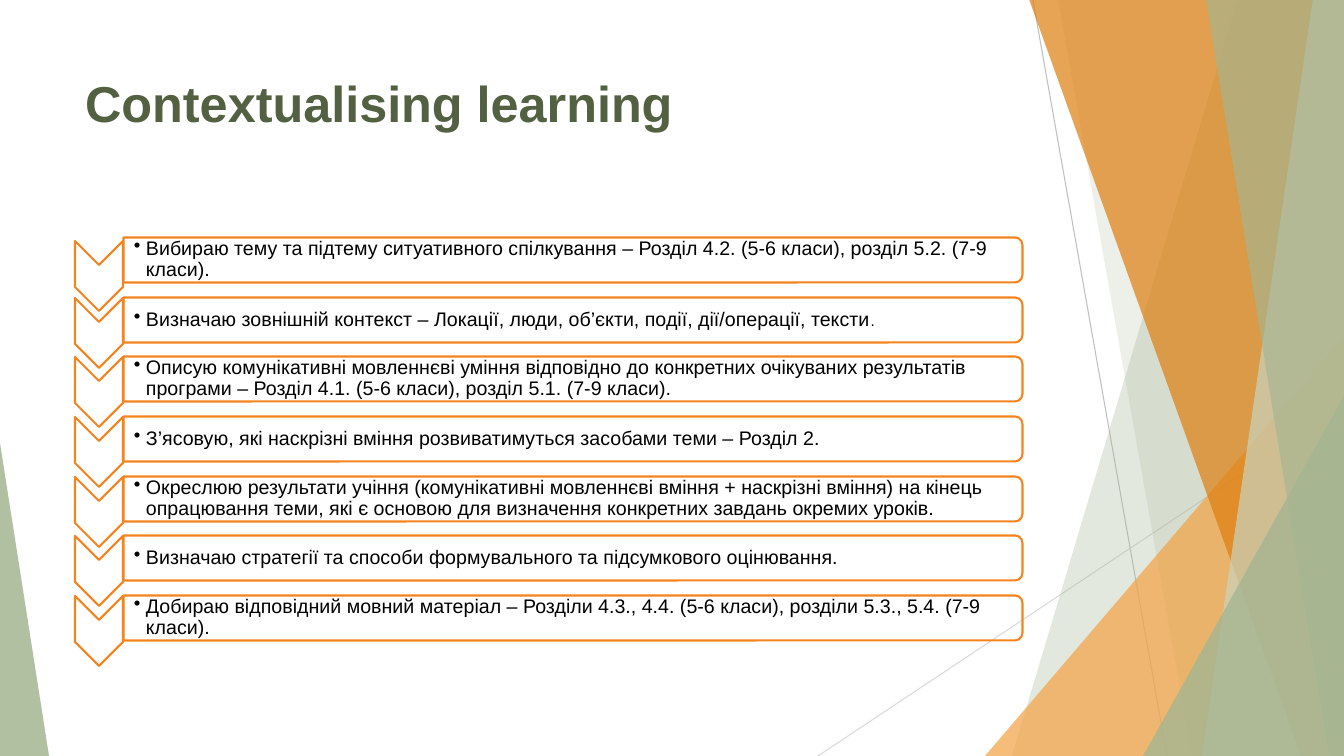
import pptx
import pptx.util
import pptx.dml.color
import pptx.enum.shapes
import pptx.enum.text
import pptx.oxml.ns
from lxml import etree

SHAPE = pptx.enum.shapes.MSO_SHAPE
PAGE_WIDTH, PAGE_HEIGHT = 1344, 756
EMU_PER_PX = 12192000 / PAGE_WIDTH

COLORS = {
    "sage": "A5B592",
    "pale sage": "C9D3BE",
    "amber": "F3A447",
    "dark amber": "DD7E0E",
    "outline": "F6841E",
    "title": "536142",
    "text": "000000",
    "white": "FFFFFF",
    "grey": "BFBFBF",
    "light grey": "D9D9D9",
}

STEPS = [
    ["Вибираю тему та підтему ситуативного спілкування – Розділ 4.2. (5-6 класи), розділ 5.2. (7-9 класи)."],
    ["Визначаю зовнішній контекст – Локації, люди, об’єкти, події, дії/операції, тексти", "."],
    ["Описую комунікативні мовленнєві уміння відповідно до конкретних очікуваних результатів "
     "програми – Розділ 4.1. (5-6 класи), розділ 5.1. (7-9 класи)."],
    ["З’ясовую, які наскрізні вміння розвиватимуться засобами теми – Розділ 2."],
    ["Окреслюю результати учіння (комунікативні мовленнєві вміння + наскрізні вміння) на кінець "
     "опрацювання теми, які є основою для визначення конкретних завдань окремих уроків."],
    ["Визначаю стратегії та способи формувального та підсумкового оцінювання."],
    ["Добираю відповідний мовний матеріал – Розділи 4.3., 4.4. (5-6 класи), розділи 5.3., 5.4. (7-9 класи)."],
]
STEP_SIZES = [14, 11]
FIRST_BAR_CENTER, LAST_BAR_CENTER = 260, 618


def px(length):
    return pptx.util.Emu(round(length * EMU_PER_PX))


def rgb(name):
    return pptx.dml.color.RGBColor.from_string(COLORS[name])


def add_span(para, text, *, size, color="text", bold=False, font="Arial"):
    span = para.add_run()
    span.text = text
    span.font.name = font
    span.font.size = pptx.util.Pt(size)
    span.font.bold = bold
    span.font.color.rgb = rgb(color)


def add_bullet(para, indent):
    properties = para._p.get_or_add_pPr()
    properties.set("marL", str(px(indent)))
    properties.set("indent", str(-px(indent)))
    bullet = etree.SubElement(properties, pptx.oxml.ns.qn("a:buChar"))
    bullet.set("char", "•")


class SlideBuilder:
    def __init__(self, deck):
        self.page = deck.slides.add_slide(deck.slide_layouts[5])
        self.shapes = self.page.shapes

    def style(self, shape, fill=None, opacity=100, line=None):
        shape.shadow.inherit = False
        if fill:
            shape.fill.solid()
            shape.fill.fore_color.rgb = rgb(fill)
        else:
            shape.fill.background()
        if opacity < 100:
            color = shape._element.spPr.find(".//" + pptx.oxml.ns.qn("a:srgbClr"))
            alpha = etree.SubElement(color, pptx.oxml.ns.qn("a:alpha"))
            alpha.set("val", str(opacity * 1000))
        if line:
            shape.line.color.rgb = rgb(line)
            shape.line.width = pptx.util.Pt(1.5)
        else:
            shape.line.fill.background()

    def title(self, text, left, top, width, height):
        title = self.shapes.title
        title.left, title.top, title.width, title.height = map(px, (left, top, width, height))
        frame = title.text_frame
        frame.vertical_anchor = pptx.enum.text.MSO_ANCHOR.TOP
        frame.auto_size = pptx.enum.text.MSO_AUTO_SIZE.NONE
        para = frame.paragraphs[0]
        para.alignment = pptx.enum.text.PP_ALIGN.LEFT
        add_span(para, text, size=36, color="title", bold=True)

    def line(self, start, end, color):
        line = self.shapes.add_connector(
            pptx.enum.shapes.MSO_CONNECTOR.STRAIGHT, *map(px, start + end))
        line.line.color.rgb = rgb(color)
        line.line.width = pptx.util.Pt(0.75)
        etree.SubElement(line._element.spPr, pptx.oxml.ns.qn("a:effectLst"))

    def edge_panel(self, top_x, bottom_x, color, opacity):
        """Fill from a slanted left side to the right edge of the page."""
        corners = [(top_x, -1), (PAGE_WIDTH, -1), (PAGE_WIDTH, PAGE_HEIGHT), (bottom_x, PAGE_HEIGHT)]
        points = [(px(x), px(y)) for x, y in corners]
        outline = self.shapes.build_freeform(*points[0], scale=1.0)
        outline.add_line_segments(points[1:], close=True)
        self.style(outline.convert_to_shape(), color, opacity)

    def corner_triangle(self, left, top, width, apex, color, opacity):
        """Stand a triangle on the bottom edge of the page."""
        triangle = self.shapes.add_shape(
            SHAPE.ISOSCELES_TRIANGLE, *map(px, (left, top, width, PAGE_HEIGHT - top)))
        triangle.adjustments[0] = apex
        self.style(triangle, color, opacity)

    def turned_shape(self, kind, center_x, center_y, length, breadth, fill=None):
        """Place an outlined shape, turned a quarter clockwise, about its centre."""
        shape = self.shapes.add_shape(
            kind, px(center_x - length / 2), px(center_y - breadth / 2), px(length), px(breadth))
        shape.rotation = 90
        self.style(shape, fill, line="outline")

    def step_text(self, texts, left, top, width, height):
        box = self.shapes.add_textbox(*map(px, (left, top, width, height)))
        frame = box.text_frame
        frame.word_wrap = True
        frame.vertical_anchor = pptx.enum.text.MSO_ANCHOR.MIDDLE
        frame.margin_left = px(11)
        frame.margin_top = frame.margin_right = frame.margin_bottom = px(1)
        para = frame.paragraphs[0]
        para.line_spacing = 0.9
        add_bullet(para, 12)
        for text, size in zip(texts, STEP_SIZES):
            add_span(para, text, size=size)


def main():
    deck = pptx.Presentation()
    deck.slide_width, deck.slide_height = px(PAGE_WIDTH), px(PAGE_HEIGHT)
    slide = SlideBuilder(deck)

    slide.line((1033, 0), (1167, 756), "grey")
    slide.line((1344, 406), (818, 756), "light grey")
    slide.edge_panel(1238, 1012, "sage", 30)
    slide.edge_panel(1058, 1192, "sage", 20)
    slide.corner_triangle(985, 336, 359, 1, "amber", 72)
    slide.edge_panel(1029, 1301, "dark amber", 70)
    slide.edge_panel(1313, 1202, "pale sage", 70)
    slide.edge_panel(1206, 1329, "sage", 65)
    slide.corner_triangle(1143, 396, 201, 1, "sage", 80)
    slide.corner_triangle(0, 443, 49, 0, "sage", 85)

    slide.title("Contextualising learning", 75, 67, 947, 145)

    pitch = (LAST_BAR_CENTER - FIRST_BAR_CENTER) / (len(STEPS) - 1)
    for index, texts in enumerate(STEPS):
        center = round(FIRST_BAR_CENTER + index * pitch)
        chevron_drop = 13 if index else 16
        slide.turned_shape(SHAPE.CHEVRON, 99, center + chevron_drop, 70, 48, fill="white")
        slide.turned_shape(SHAPE.ROUND_2_SAME_RECTANGLE, 573, center, 45, 899)
        slide.step_text(texts, 123, center - 20, 897, 40)

    deck.save("out.pptx")


if __name__ == "__main__":
    main()
